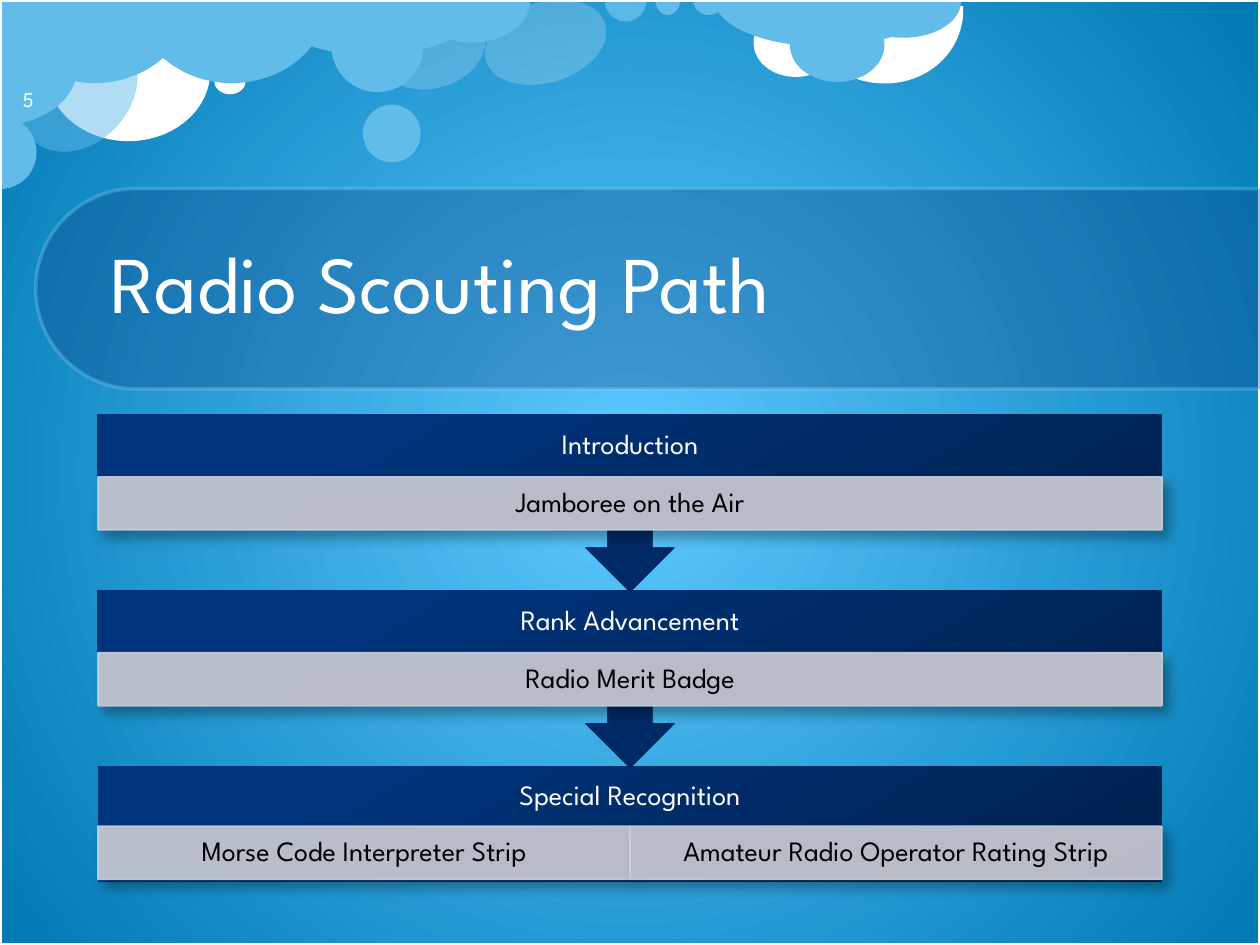
from pptx import Presentation
from pptx.dml.color import RGBColor
from pptx.enum.shapes import MSO_SHAPE
from pptx.enum.text import MSO_ANCHOR, PP_ALIGN
from pptx.oxml import parse_xml
from pptx.oxml.ns import nsdecls, qn
from pptx.util import Pt

# Content
TITLE = "Radio Scouting Path"
NUMBER = "5"
STAGES = [
    ("Introduction", ["Jamboree on the Air"]),
    ("Rank Advancement", ["Radio Merit Badge"]),
    ("Special Recognition",
     ["Morse Code Interpreter Strip", "Amateur Radio Operator Rating Strip"]),
]

# Look
FONT = "League Spartan"
WHITE, BLACK, SKY, PALE = "FFFFFF", "000000", "62BCE9", "8FD9FB"
NAVY, GREY = "073779", "CCCED7"
GLOW = [(0, "5DC9FF"), (100, "0079B5")]
DEEP = [(0, "00204C"), (80, "00347C"), (100, "00347D")]
ROUND, HALF, ARC = MSO_SHAPE.OVAL, MSO_SHAPE.PIE, MSO_SHAPE.ARC
SWEEP = {HALF: (0, 108), ARC: (151.8, 44.48)}

# Clouds, back to front: kind, left, top, width, height, turn, colour, opacity
CLOUDS = [
    (ROUND, 224, -3.6, 46, 62, 72.8, WHITE, 20),
    (ROUND, 26.6, 0.7, 93.6, 80, 0, WHITE, 100),
    (ARC, 460, -43.2, 87, 94.3, 106.5, WHITE, 100),
    (ROUND, 430.6, 5, 48.2, 39, 0, WHITE, 100),
    (HALF, -0.7, -47.5, 109.4, 95, 0, SKY, 100),
    (HALF, 149.8, -31.7, 126, 63.4, 0, SKY, 100),
    (ROUND, 207.4, 59.8, 33, 33, 0, SKY, 100),
    (ROUND, 13.7, 13, 61.2, 77, 41.8, SKY, 50),
    (HALF, -20.9, 66.2, 41.8, 41.8, 270, SKY, 100),
    (ROUND, 122.4, 38.9, 18, 15, 0, WHITE, 100),
    (HALF, 77.8, -47.5, 109.4, 95, 0, SKY, 100),
    (HALF, 408.2, -27.4, 126, 54, 0, SKY, 100),
    (ROUND, 451.4, 5, 54, 41.8, 0, SKY, 100),
    (HALF, 483, -20.2, 66.2, 41.8, 0, SKY, 100),
    (ROUND, 288.7, -11.5, 46, 71.3, 72.8, WHITE, 20),
    (HALF, 345.6, -11.5, 23.8, 23.8, 0, PALE, 50),
    (HALF, 374.4, -9.4, 14.4, 18, 0, SKY, 100),
    (HALF, 396, -9.4, 18, 18, 0, SKY, 100),
    (ROUND, 189.4, 0, 52.6, 52.6, 0, SKY, 100),
    (HALF, 236.9, -23.8, 66.2, 48.2, 0, SKY, 100),
    (HALF, -33.8, -6.5, 67, 89.3, 270, SKY, 100),
]

# Stage grid
LEFT, TOP, WIDE, STEP = 56, 236.9, 608, 100.45
CALL, BODY, STRIP = 101.5, 66.2, 30.3


def color(code):
    return RGBColor.from_string(code)


def blend(holder, stops, way):
    """Swap the solid fill in holder for a gradient."""
    marks = "".join(
        f'<a:gs pos="{pos * 1000}"><a:srgbClr val="{code}"/></a:gs>'
        for pos, code in stops)
    grad = parse_xml(f'<a:gradFill {nsdecls("a")} rotWithShape="0">'
                     f'<a:gsLst>{marks}</a:gsLst>{way}</a:gradFill>')
    holder.replace(holder.find(qn("a:solidFill")), grad)


def draw(kind, box, fill=None, line=None, width=1, alpha=100, turn=0, adj=()):
    shape = slide.shapes.add_shape(kind, *map(Pt, box))
    shape.shadow.inherit = False
    shape.rotation = turn
    for i, value in enumerate(adj):
        shape.adjustments[i] = value
    if fill:
        shape.fill.solid()
        shape.fill.fore_color.rgb = color(fill)
    else:
        shape.fill.background()
    if line:
        shape.line.color.rgb = color(line)
        shape.line.width = Pt(width)
    else:
        shape.line.fill.background()
    if alpha < 100:
        for tone in shape.element.spPr.iter(qn("a:srgbClr")):
            tone.append(parse_xml(
                f'<a:alpha {nsdecls("a")} val="{alpha * 1000}"/>'))
    return shape


def write(shape, text, size, code, align=PP_ALIGN.LEFT, pad=(7.2, 3.6),
          space=None):
    frame = shape.text_frame
    frame.word_wrap = True
    frame.vertical_anchor = MSO_ANCHOR.MIDDLE
    frame.margin_left = frame.margin_right = Pt(pad[0])
    frame.margin_top = frame.margin_bottom = Pt(pad[1])
    para = frame.paragraphs[0]
    para.alignment = align
    para.line_spacing = space
    run = para.add_run()
    run.text = text
    run.font.name, run.font.size = FONT, Pt(size)
    run.font.color.rgb = color(code)


def label(box, *args, **opts):
    write(slide.shapes.add_textbox(*map(Pt, box)), *args, **opts)


def shade(shape):
    shape.element.spPr.find(qn("a:effectLst")).append(parse_xml(
        f'<a:outerShdw {nsdecls("a")} blurRad="{Pt(7)}" dist="{Pt(5)}" '
        f'dir="{50 * 60000}" rotWithShape="0"><a:srgbClr val="{BLACK}">'
        '<a:alpha val="35000"/></a:srgbClr></a:outerShdw>'))


deck = Presentation()
deck.slide_width, deck.slide_height = Pt(720), Pt(540)
slide = deck.slides.add_slide(deck.slide_layouts[5])

# Background
back = slide.background.fill
back.solid()
back.fore_color.rgb = color(SKY)
blend(slide.element.find(".//" + qn("p:bgPr")), GLOW,
      '<a:path path="circle"><a:fillToRect l="50000" t="50000" '
      'r="50000" b="50000"/></a:path>')

# Clouds, frame and title band
for kind, x, y, w, h, turn, tone, alpha in CLOUDS:
    draw(kind, (x, y, w, h), tone, alpha=alpha, turn=turn,
         adj=SWEEP.get(kind, ()))
draw(MSO_SHAPE.RECTANGLE, (0, 0, 720, 540), line=WHITE, width=2)
draw(MSO_SHAPE.ROUND_2_SAME_RECTANGLE, (313.2, -185, 114.5, 700), NAVY,
     PALE, 2, alpha=30, turn=270, adj=(0.5, 0))

# Title and slide number
title = slide.shapes.title
title.element.getparent().append(title.element)
title.left, title.top, title.width, title.height = map(
    Pt, (LEFT, 108, WIDE, 104.4))
write(title, TITLE, 46, WHITE, space=Pt(56))
label((5.8, 47.5, 109.4, 18), NUMBER, 12, WHITE)

# Stages, last one first so that each arrow lies over the next bar
for i, (head, items) in reversed(list(enumerate(STAGES))):
    y = TOP + i * STEP
    last = i == len(STAGES) - 1
    if last:
        bar = draw(MSO_SHAPE.RECTANGLE, (LEFT, y, WIDE, BODY), NAVY)
    else:
        bar = draw(MSO_SHAPE.UP_ARROW_CALLOUT, (LEFT, y, WIDE, CALL), NAVY,
                   turn=180)
    blend(bar.element.spPr, DEEP, f'<a:lin ang="{240 * 60000}" scaled="0"/>')
    drop = 34.4 if last else 35.6
    label((LEFT, y, WIDE, drop), head, 16, WHITE, PP_ALIGN.CENTER,
          (8.6, 8.6), 0.9)
    part = WIDE / len(items)
    for j, item in enumerate(items):
        cell = draw(MSO_SHAPE.RECTANGLE,
                    (LEFT + j * part, y + drop, part, STRIP),
                    GREY, GREY, alpha=90)
        shade(cell)
        write(cell, item, 16, BLACK, PP_ALIGN.CENTER, (8.6, 1.4), 0.9)

deck.save("out.pptx")
